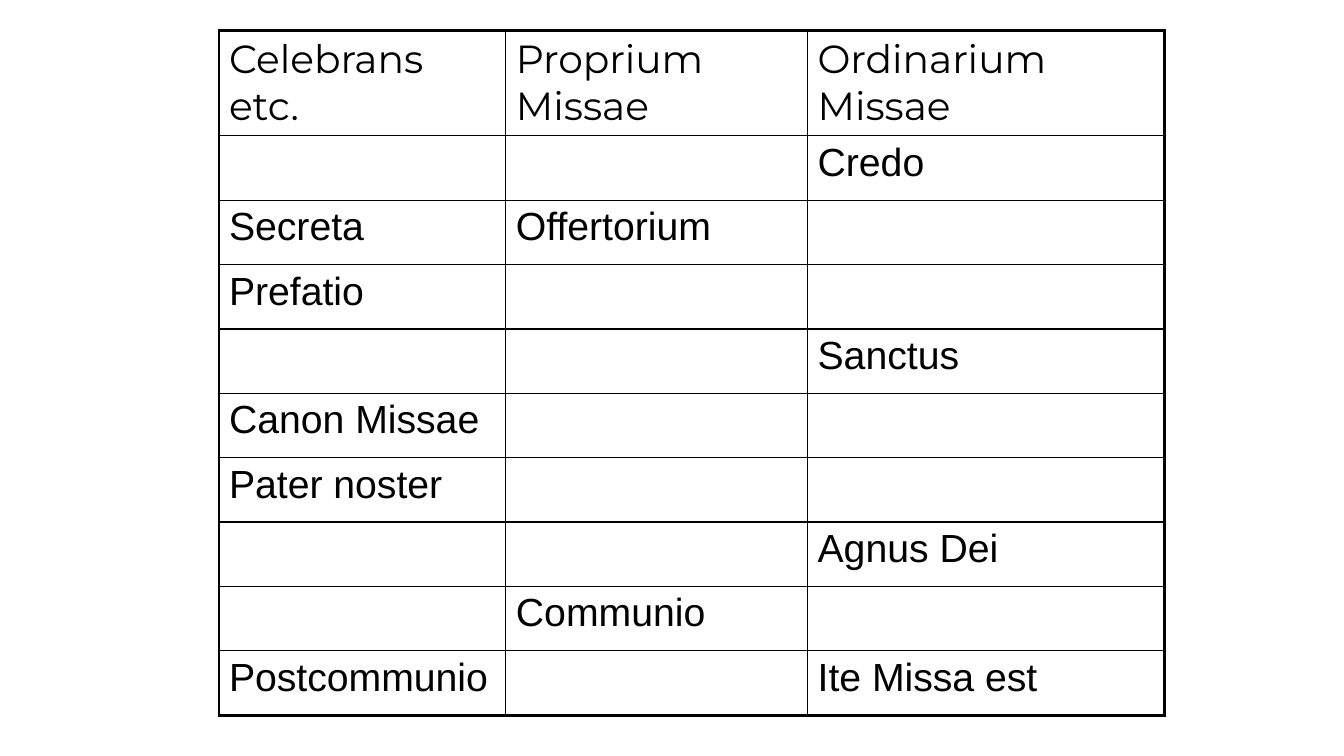
"""Build a slide with a table of the sections of the Mass."""
from dataclasses import dataclass
from typing import NamedTuple

from lxml import etree
from pptx import Presentation
from pptx import util as u
from pptx.dml import color
from pptx.oxml import ns


@dataclass(frozen=True)
class Theme:
    ink: str = "000000"
    header_font: str = "Montserrat"
    body_font: str = "Arial"
    size: float = 28
    outer_line: float = 2.25
    inner_line: float = 1


class MassRow(NamedTuple):
    celebrant: str = ""
    proper: str = ""
    ordinary: str = ""


THEME = Theme()
COLUMN_WIDTHS = (205, 215.5, 255)
HEADER_HEIGHT, ROW_HEIGHT = 75, 46
LEFT, TOP = 156.4, 21.6
MASS = (
    MassRow("Celebrans etc.", "Proprium Missae", "Ordinarium Missae"),
    MassRow(ordinary="Credo"),
    MassRow("Secreta", "Offertorium"),
    MassRow("Prefatio"),
    MassRow(ordinary="Sanctus"),
    MassRow("Canon Missae"),
    MassRow("Pater noster"),
    MassRow(ordinary="Agnus Dei"),
    MassRow(proper="Communio"),
    MassRow("Postcommunio", ordinary="Ite Missa est"),
)


def draw_border(cell, side: str, width: float) -> None:
    """Draw one side of a cell border."""
    line = etree.SubElement(cell._tc.get_or_add_tcPr(), ns.qn(f"a:ln{side}"),
                            w=str(int(u.Pt(width))))
    ink = etree.SubElement(line, ns.qn("a:solidFill"))
    etree.SubElement(ink, ns.qn("a:srgbClr"), val=THEME.ink)


def draw_cell(cell, wording: str, font_name: str, edges: dict[str, bool]) -> None:
    """Write a section of the Mass and frame its cell."""
    for side, is_outer in edges.items():
        draw_border(cell, side, THEME.outer_line if is_outer else THEME.inner_line)
    cell.fill.background()
    cell.text_frame.text = wording
    for paragraph in cell.text_frame.paragraphs:
        for run in paragraph.runs:
            run.font.name = font_name
            run.font.size = u.Pt(THEME.size)
            run.font.color.rgb = color.RGBColor.from_string(THEME.ink)


def draw_mass(slide, rows: tuple[MassRow, ...]) -> None:
    """Draw the table with a heavy frame and thin inner lines."""
    heights = [HEADER_HEIGHT] + [ROW_HEIGHT] * (len(rows) - 1)
    mass = slide.shapes.add_table(
        len(rows), len(COLUMN_WIDTHS), u.Pt(LEFT), u.Pt(TOP),
        u.Pt(sum(COLUMN_WIDTHS)), u.Pt(sum(heights))).table
    mass.first_row = mass.horz_banding = False
    for column, width in zip(mass.columns, COLUMN_WIDTHS):
        column.width = u.Pt(width)
    last_row, last_column = len(rows) - 1, len(COLUMN_WIDTHS) - 1
    for r, (row, height) in enumerate(zip(rows, heights)):
        mass.rows[r].height = u.Pt(height)
        font_name = THEME.body_font if r else THEME.header_font
        for c, wording in enumerate(row):
            edges = {"L": c == 0, "R": c == last_column,
                     "T": r == 0, "B": r == last_row}
            draw_cell(mass.cell(r, c), wording, font_name, edges)


def main() -> None:
    """Build and save the presentation."""
    deck = Presentation()
    deck.slide_width, deck.slide_height = u.Pt(960), u.Pt(540)
    draw_mass(deck.slides.add_slide(deck.slide_layouts[6]), MASS)
    deck.save("out.pptx")


if __name__ == "__main__":
    main()
